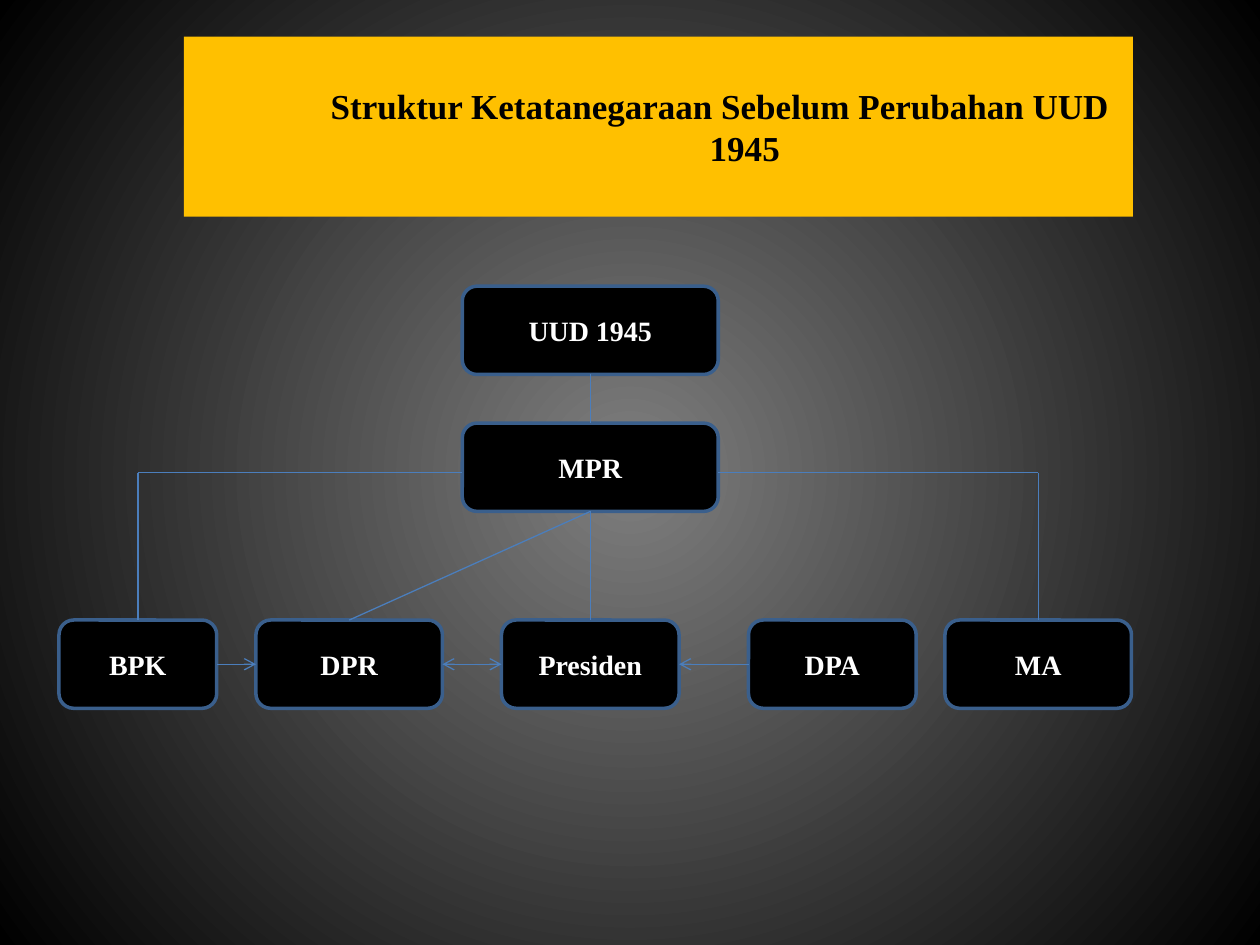
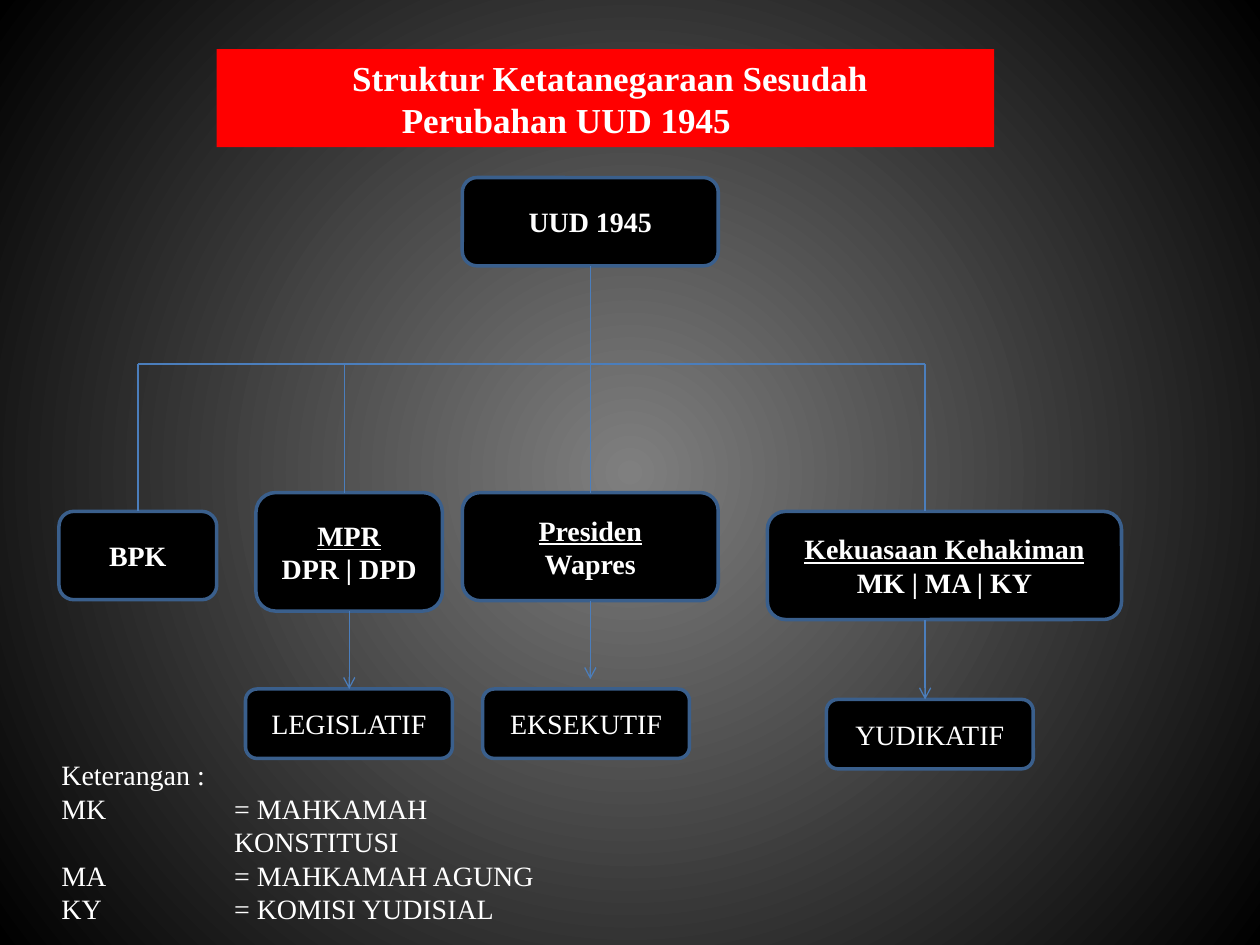
from dataclasses import dataclass

from lxml.etree import SubElement
from pptx import Presentation
from pptx.dml.color import RGBColor
from pptx.enum.shapes import MSO_CONNECTOR, MSO_SHAPE
from pptx.enum.text import MSO_ANCHOR, PP_ALIGN
from pptx.oxml.ns import qn
from pptx.util import Cm, Pt


@dataclass(frozen=True)
class Theme:
    font: str = "Times New Roman"
    title_size: int = 20
    body_size: int = 16
    black: str = "000000"
    white: str = "FFFFFF"
    glow: str = "7F7F7F"
    amber: str = "FFC000"
    red: str = "FF0000"
    border: str = "3A5F8C"
    link: str = "4B7EBC"
    border_width: float = 2
    link_width: float = 0.75


THEME = Theme()
TOP, LEFT, BOTTOM, RIGHT = range(4)
TAB = 3.48
AXIS = 11.9
WIDE = 5.16
HIGH = 1.78


def rgb(value):
    return RGBColor.from_string(value)


def write(tf, text, size=THEME.body_size, color=THEME.white, bold=False,
          align=PP_ALIGN.CENTER, underline_first=False, hang=None):
    tf.word_wrap = True
    tf.vertical_anchor = MSO_ANCHOR.MIDDLE
    for i, line in enumerate(text.split("\n")):
        p = tf.paragraphs[0] if i == 0 else tf.add_paragraph()
        p.alignment = align
        if hang is not None:
            pPr = p._p.get_or_add_pPr()
            pPr.set("marL", str(Cm(TAB)))
            pPr.set("indent", str(-Cm(hang)))
            tabs = SubElement(pPr, qn("a:tabLst"))
            SubElement(tabs, qn("a:tab"), pos=str(Cm(TAB)), algn="l")
        r = p.add_run()
        r.text = line
        r.font.name = THEME.font
        r.font.size = Pt(size)
        r.font.bold = bold
        r.font.color.rgb = rgb(color)
        if underline_first and i == 0:
            r.font.underline = True


def add_block(s, kind, fill, x, y, w, h):
    sp = s.shapes.add_shape(kind, Cm(x), Cm(y), Cm(w), Cm(h))
    sp.shadow.inherit = False
    sp.fill.solid()
    sp.fill.fore_color.rgb = rgb(fill)
    return sp


def add_title(s, text, x, y, w, h, fill, **fmt):
    sp = add_block(s, MSO_SHAPE.RECTANGLE, fill, x, y, w, h)
    sp.line.fill.background()
    write(sp.text_frame, text, size=THEME.title_size, bold=True, hang=1, **fmt)


def add_node(s, text, x, y, w=WIDE, h=HIGH, bold=True):
    sp = add_block(s, MSO_SHAPE.ROUNDED_RECTANGLE, THEME.black, x, y, w, h)
    sp.line.color.rgb = rgb(THEME.border)
    sp.line.width = Pt(THEME.border_width)
    write(sp.text_frame, text, bold=bold, underline_first="\n" in text)
    return sp


def add_line(s, x1, y1, x2, y2, head=False, tail=False):
    cx = s.shapes.add_connector(MSO_CONNECTOR.STRAIGHT, Cm(x1), Cm(y1), Cm(x2), Cm(y2))
    cx.line.color.rgb = rgb(THEME.link)
    cx.line.width = Pt(THEME.link_width)
    ln = cx.line._get_or_add_ln()
    for tag, wanted in (("a:headEnd", head), ("a:tailEnd", tail)):
        if wanted:
            SubElement(ln, qn(tag), type="arrow")
    SubElement(cx._element.spPr, qn("a:effectLst"))
    return cx


def join(s, start, start_side, end, end_side, **arrows):
    cx = add_line(s, 0, 0, 1, 1, **arrows)
    cx.begin_connect(start, start_side)
    cx.end_connect(end, end_side)


def add_legend(s, text, x, y, w, h):
    sp = s.shapes.add_textbox(Cm(x), Cm(y), Cm(w), Cm(h))
    write(sp.text_frame, text, align=PP_ALIGN.LEFT, hang=TAB)


def set_background(master):
    fill = master.background.fill
    fill.gradient()
    for stop, color in zip(fill.gradient_stops, (THEME.glow, THEME.black)):
        stop.color.rgb = rgb(color)
    lin = master.element.find(".//" + qn("p:bg")).find(".//" + qn("a:lin"))
    grad = lin.getparent()
    grad.remove(lin)
    radial = SubElement(grad, qn("a:path"), path="circle")
    SubElement(radial, qn("a:fillToRect"), l="50000", t="50000", r="50000", b="50000")


def build_before(s):
    add_title(s, "Struktur Ketatanegaraan Sebelum Perubahan UUD 1945",
              3.71, 0.74, 19.13, 3.63, THEME.amber, color=THEME.black)
    uud = add_node(s, "UUD 1945", AXIS - WIDE / 2, 5.77)
    mpr = add_node(s, "MPR", AXIS - WIDE / 2, 8.53)

    row_y, branch_y = 12.5, 9.53
    bodies = [("BPK", 1.19, 3.18), ("DPR", 5.16, 3.76), ("Presiden", 10.11, 3.58),
              ("DPA", 15.09, 3.38), ("MA", 19.05, 3.76)]
    bpk, dpr, presiden, dpa, ma = [add_node(s, name, x, row_y, w) for name, x, w in bodies]

    join(s, uud, BOTTOM, mpr, TOP)
    join(s, mpr, BOTTOM, presiden, TOP)
    join(s, mpr, BOTTOM, dpr, TOP)
    for body, edge in ((bpk, AXIS - WIDE / 2), (ma, AXIS + WIDE / 2)):
        x = (body.left + body.width / 2) / Cm(1)
        add_line(s, x, branch_y, edge, branch_y)
        add_line(s, x, branch_y, x, row_y)
    join(s, bpk, RIGHT, dpr, LEFT, tail=True)
    join(s, dpa, LEFT, presiden, RIGHT, tail=True)
    join(s, dpr, RIGHT, presiden, LEFT, head=True, tail=True)


def build_after(s):
    add_title(s, "Struktur Ketatanegaraan Sesudah Perubahan UUD 1945",
              4.37, 0.99, 15.67, 1.98, THEME.red, align=PP_ALIGN.LEFT)
    add_node(s, "UUD 1945", AXIS - WIDE / 2, 3.58)
    add_node(s, "BPK", 1.19, 10.31, 3.18)
    add_node(s, "MPR\nDPR | DPD", 5.16, 9.93, 3.76, 2.39)
    add_node(s, "Presiden\nWapres", AXIS - WIDE / 2, 9.93, h=2.18)
    add_node(s, "Kekuasaan Kehakiman\nMK | MA | KY", 15.47, 10.31, 7.14, 2.18)

    bus_y, bpk_x, court_x = 7.34, 2.78, 18.65
    add_line(s, bpk_x, bus_y, court_x, bus_y)
    for x, top, bottom in ((AXIS, 3.58 + HIGH, 9.93), (bpk_x, bus_y, 10.31),
                           (6.95, bus_y, 9.93), (court_x, bus_y, 10.31)):
        add_line(s, x, top, x, bottom)

    for name, x, y in (("LEGISLATIF", 4.95, 13.89), ("EKSEKUTIF", 9.73, 13.89),
                       ("YUDIKATIF", 16.66, 14.1)):
        add_node(s, name, x, y, 4.17, 1.4, bold=False)
    for x, top, bottom in ((7.04, 12.32, 13.89), (AXIS, 12.11, 13.69),
                           (court_x, 12.49, 14.1)):
        add_line(s, x, top, x, bottom, tail=True)

    add_legend(s, "Keterangan :\nMK\t= MAHKAMAH KONSTITUSI\n"
                  "MA\t= MAHKAMAH AGUNG\nKY\t= KOMISI YUDISIAL",
               0.99, 15.67, 11.3, 2.59)


def main():
    prs = Presentation()
    prs.slide_width, prs.slide_height = Cm(25.4), Cm(19.05)
    set_background(prs.slide_master)
    for build in (build_before, build_after):
        build(prs.slides.add_slide(prs.slide_layouts[6]))
    prs.save("out.pptx")


if __name__ == "__main__":
    main()
